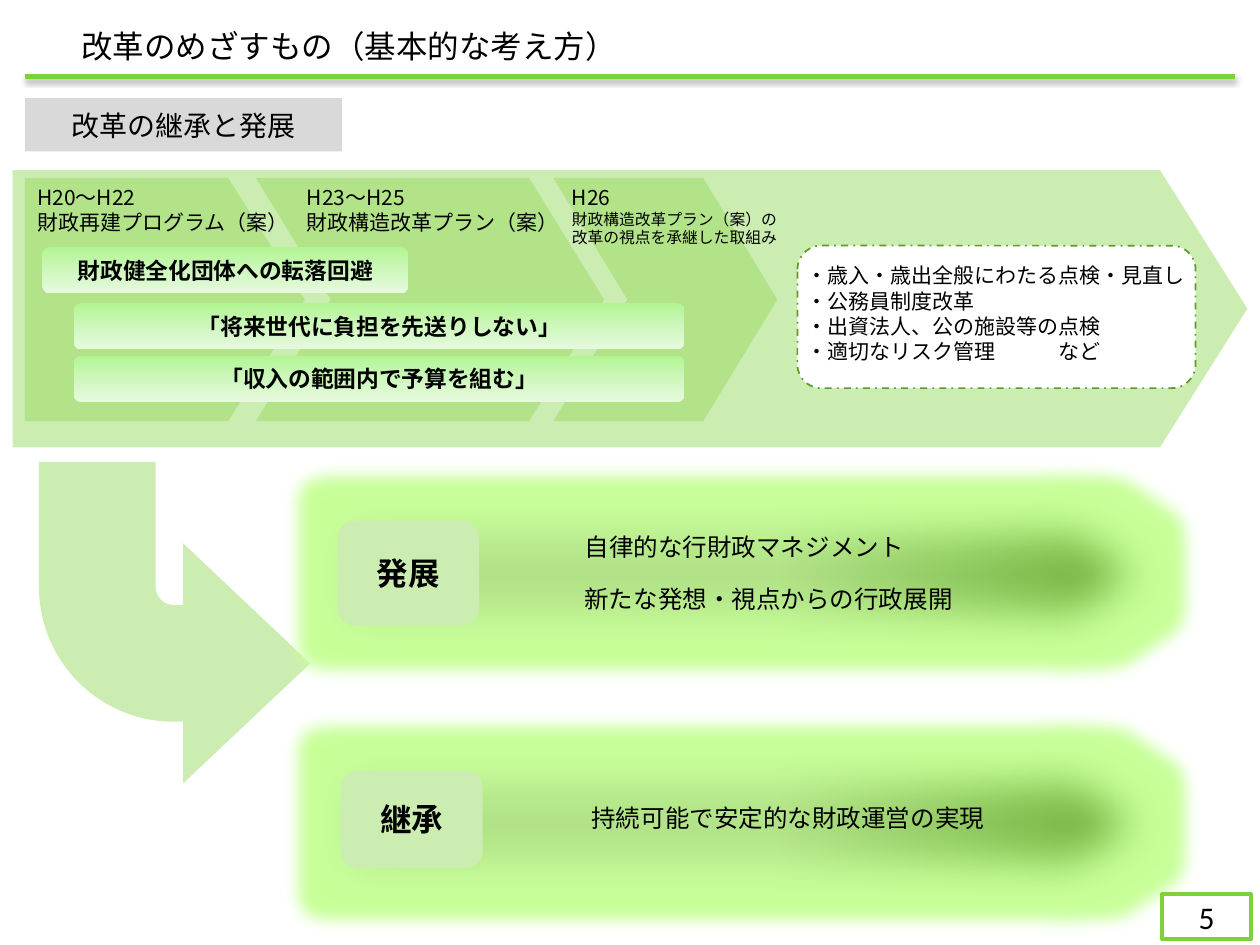
from dataclasses import dataclass

from lxml.etree import SubElement
from pptx import Presentation
from pptx.dml.color import RGBColor
from pptx.enum.dml import MSO_LINE_DASH_STYLE as Dash
from pptx.enum.shapes import MSO_CONNECTOR as Connector, MSO_SHAPE as Preset
from pptx.enum.text import MSO_ANCHOR as Anchor, PP_ALIGN as Align
from pptx.oxml.ns import qn
from pptx.util import Pt


@dataclass(frozen=True)
class Theme:
    """Colours, fonts and type sizes of the slide."""
    font: str = "Noto Sans CJK JP"
    number_font: str = "Calibri"
    black: str = "000000"
    white: str = "FFFFFF"
    grey: str = "D9D9D9"
    accent: str = "7FD13B"
    pale: str = "CCEDB1"
    light: str = "B2E389"
    dark: str = "5E9B2C"
    glow: str = "C8FF99"
    goal_fill: tuple = ("B2E389", "B2E389", "5FA326")
    slogan_fill: tuple = ("B2F592", "CEF7BD", "E7FADF")
    title: int = 18
    section: int = 16
    goal: int = 14
    slogan: int = 13
    body: int = 12
    small: int = 9


THEME = Theme()


def write(shape, lines, size, bold=False, align=Align.CENTER, anchor=Anchor.MIDDLE,
          font=THEME.font, pitch=None):
    """Fill a shape with lines of text, each a string or a (string, size) pair."""
    frame = shape.text_frame
    frame.word_wrap, frame.vertical_anchor = True, anchor
    for index, line in enumerate(lines):
        text, points = line if isinstance(line, tuple) else (line, size)
        paragraph = frame.add_paragraph() if index else frame.paragraphs[0]
        paragraph.text, paragraph.alignment = text, align
        paragraph.space_before = Pt(0)
        if pitch:
            paragraph.line_spacing = Pt(pitch * points)
        paragraph.font.size, paragraph.font.bold, paragraph.font.name = Pt(points), bold, font
        paragraph.font.color.rgb = RGBColor.from_string(THEME.black)
        defaults = paragraph._p.pPr.find(qn("a:defRPr"))
        SubElement(defaults, qn("a:ea")).set("typeface", font)


def add_preset(slide, preset, box, fill=None, adjust=(), line=None, width=1):
    """Add a preset shape with a plain, graded or empty fill."""
    shape = slide.shapes.add_shape(preset, *map(Pt, box))
    shape.shadow.inherit = False
    for index, value in enumerate(adjust):
        shape.adjustments[index] = value
    if fill:
        shape.fill.solid()
        shape.fill.fore_color.rgb = RGBColor.from_string(fill)
    else:
        shape.fill.background()
    if line:
        shape.line.color.rgb, shape.line.width = RGBColor.from_string(line), Pt(width)
    else:
        shape.line.fill.background()
    return shape


def grade(shape, colors, angle):
    """Give a shape an evenly spaced linear gradient."""
    properties = shape._element.spPr
    properties.remove(properties.find(qn("a:noFill")))
    gradient = properties.makeelement(qn("a:gradFill"), {"rotWithShape": "1"})
    stops = SubElement(gradient, qn("a:gsLst"))
    for index, color in enumerate(colors):
        position = 100000 * index // (len(colors) - 1)
        stop = SubElement(stops, qn("a:gs"), pos=str(position))
        SubElement(stop, qn("a:srgbClr"), val=color)
    SubElement(gradient, qn("a:lin"), ang=str(angle * 60000), scaled="0")
    properties.find(qn("a:prstGeom")).addnext(gradient)


def place(shape, box):
    """Move a placeholder to a box."""
    shape.left, shape.top, shape.width, shape.height = map(Pt, box)


def add_header(slide, box):
    """Place the title, its shadowed rule and the section label."""
    left, top, width, _ = box
    title = slide.shapes.title
    place(title, (left, top, width - 50, 29))
    write(title, ["改革のめざすもの（基本的な考え方）"], THEME.title, align=Align.LEFT)
    title.text_frame.margin_left = Pt(32)
    rule = slide.shapes.add_connector(
        Connector.STRAIGHT, *map(Pt, (left, top + 32.4, left + width, top + 32.4)))
    rule.line.color.rgb, rule.line.width = RGBColor.from_string(THEME.accent), Pt(3)
    effects = SubElement(rule._element.spPr, qn("a:effectLst"))
    shadow = SubElement(effects, qn("a:outerShdw"), blurRad=str(Pt(3.1)), dist=str(Pt(1.8)),
                        dir="5400000", rotWithShape="0")
    color = SubElement(shadow, qn("a:srgbClr"), val=THEME.black)
    SubElement(color, qn("a:alpha"), val="35000")
    label = add_preset(slide, Preset.RECTANGLE, (left, top + 44.6, 181, 30.5), THEME.grey)
    write(label, ["改革の継承と発展"], THEME.section)


def add_timeline(slide, box):
    """Place the wide arrow with its three periods, slogans and reform list."""
    left, top, width, height = box
    add_preset(slide, Preset.PENTAGON, box, THEME.pale, [0.315])
    periods = (
        (Preset.CHEVRON, 309, 128, 0.331, 312.5, 132,
         ["H26", ("財政構造改革プラン（案）の", THEME.small),
          ("改革の視点を承継した取組み", THEME.small)]),
        (Preset.CHEVRON, 139, 199, 0.308, 161, 178,
         ["H23～H25", "財政構造改革プラン（案）"]),
        (Preset.PENTAGON, 7, 160, 0.315, 7, 178,
         ["H20～H22", "財政再建プログラム（案）"]),
    )
    for preset, x, span, point, *_ in periods:
        add_preset(slide, preset, (left + x, top + 4.5, span, 139), THEME.light, [point])
    for *_, x, span, lines in periods:
        caption = slide.shapes.add_textbox(*map(Pt, (left + x, top + 4.5, span, 36)))
        write(caption, lines, THEME.body, align=Align.LEFT, anchor=Anchor.TOP, pitch=1.2)
    for x, y, span, text in ((35, 76, 349, "「将来世代に負担を先送りしない」"),
                             (17, 44, 209, "財政健全化団体への転落回避"),
                             (35, 106, 349, "「収入の範囲内で予算を組む」")):
        slogan = add_preset(slide, Preset.ROUNDED_RECTANGLE, (left + x, top + y, span, 26.5))
        grade(slogan, THEME.slogan_fill, 90)
        write(slogan, [text], THEME.slogan, bold=True)
    add_reforms(slide, (left + 448.5, top + 43.2, 227.5, 81.4))


def add_reforms(slide, box):
    """Place the dashed panel and the body list on it."""
    left, top, width, height = box
    panel = add_preset(slide, Preset.ROUNDED_RECTANGLE, box, THEME.white, line=THEME.dark)
    panel.line.dash_style = Dash.DASH_DOT
    body = slide.placeholders[1]
    place(body, (left - 2, top + 6.3, width + 4, 65.5))
    write(body, ["・歳入・歳出全般にわたる点検・見直し", "・公務員制度改革",
                 "・出資法人、公の施設等の点検", "・適切なリスク管理\tなど"],
          THEME.body, align=Align.LEFT, anchor=Anchor.TOP, pitch=1.2)
    for paragraph in body.text_frame.paragraphs:
        properties = paragraph._p.pPr
        properties.set("marL", "0")
        properties.set("indent", "0")
        defaults = properties.find(qn("a:defRPr"))
        defaults.addprevious(properties.makeelement(qn("a:buNone"), {}))
        tabs = properties.makeelement(qn("a:tabLst"), {})
        SubElement(tabs, qn("a:tab"), pos=str(Pt(180)), algn="l")
        defaults.addprevious(tabs)
    panel._element.addnext(body._element)


def add_goal(slide, box, name, badge_box, lines):
    """Place a glowing arrow with its badge and goal lines."""
    left, top, width, height = box
    arrow = add_preset(slide, Preset.RIGHT_ARROW, box, adjust=[0.678, 0.725])
    grade(arrow, THEME.goal_fill, 0)
    effects = arrow._element.spPr.find(qn("a:effectLst"))
    glow = SubElement(effects, qn("a:glow"), rad=str(Pt(18)))
    SubElement(glow, qn("a:srgbClr"), val=THEME.glow)
    SubElement(effects, qn("a:softEdge"), rad=str(Pt(25)))
    x, y, span, rise = badge_box
    badge = add_preset(slide, Preset.ROUNDED_RECTANGLE, (left + x, top + y, span, rise), THEME.pale)
    write(badge, [name], THEME.title, bold=True)
    for x, y, text in lines:
        goal = add_preset(slide, Preset.ROUNDED_RECTANGLE, (left + x, top + y, 278, 33))
        write(goal, [text], THEME.goal)


def add_page_number(slide, box):
    """Place the framed page number."""
    frame = add_preset(slide, Preset.RECTANGLE, box, THEME.white, line=THEME.accent, width=2)
    write(frame, ["5"], THEME.title, font=THEME.number_font)


def main():
    """Build the slide and save it."""
    presentation = Presentation()
    presentation.slide_width, presentation.slide_height = Pt(720), Pt(540)
    slide = presentation.slides.add_slide(presentation.slide_layouts[1])
    bend = add_preset(slide, Preset.BENT_ARROW, (22.3, 264, 155, 183.6), THEME.pale,
                      [0.43, 0.442, 0.468, 0.497])
    bend._element.spPr.xfrm.set("flipV", "1")
    add_header(slide, (14.4, 11.5, 691.2, 75))
    add_timeline(slide, (7.2, 97.2, 705.6, 158.4))
    add_goal(slide, (179.3, 258.5, 527, 138.2), "発展", (13.5, 39, 81, 60),
             [(107, 37.5, "自律的な行財政マネジメント"),
              (121, 67, "新たな発想・視点からの行政展開")])
    add_goal(slide, (179.3, 401, 527, 138.2), "継承", (15.5, 39.5, 81, 55.5),
             [(132, 49.7, "持続可能で安定的な財政運営の実現")])
    add_page_number(slide, (664, 511, 51, 25.5))
    presentation.save("out.pptx")


if __name__ == "__main__":
    main()
